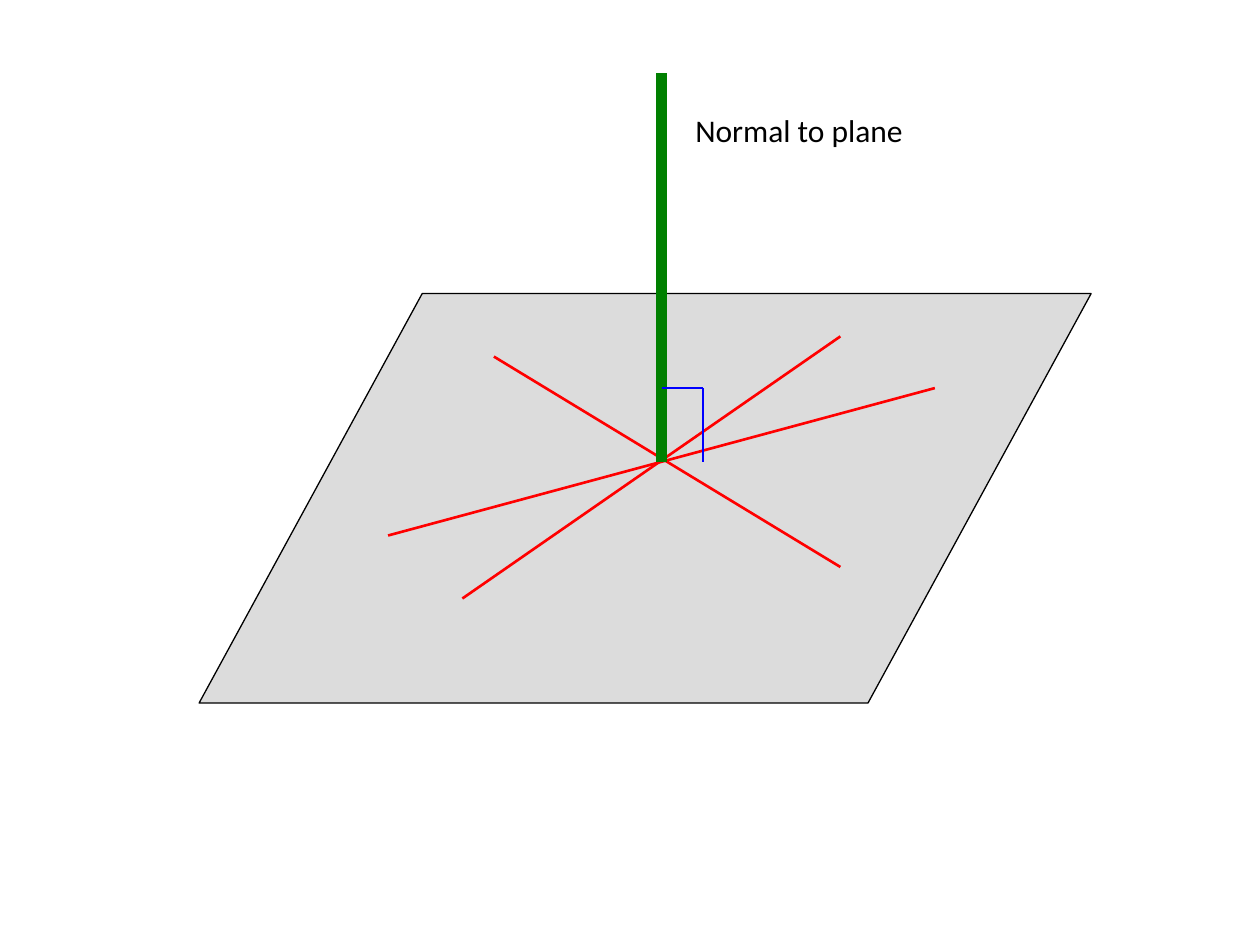
from lxml import etree
from pptx import Presentation
from pptx.dml.color import RGBColor
from pptx.enum import shapes, text
from pptx.oxml.ns import qn
from pptx.util import Inches, Pt

# Content: line ends as (x1, y1, x2, y2) in inches
PLANE = (1.58, 2.33, 7.08, 3.25)
PLANE_LINES = [
    (3.08, 4.25, 7.42, 3.08),
    (3.92, 2.83, 6.67, 4.5),
    (3.67, 4.75, 6.67, 2.67),
]
NORMAL = (5.25, 3.67, 5.25, 0.58)
RIGHT_ANGLE = [(5.25, 3.08, 5.58, 3.08), (5.58, 3.08, 5.58, 3.67)]
LABEL = "Normal to plane"
LABEL_BOX = (5.42, 0.83, 2, 0.4)


def color(value):
    return RGBColor.from_string(value)


def inches(values):
    return [Inches(v) for v in values]


def add_line(parent, ends, line_color, width):
    c = parent.add_connector(shapes.MSO_CONNECTOR.STRAIGHT, *inches(ends))
    c.line.color.rgb = color(line_color)
    c.line.width = Pt(width)
    etree.SubElement(c._element.spPr, qn("a:effectLst"))


prs = Presentation()
prs.slide_width, prs.slide_height = Inches(10), Inches(7.5)
s = prs.slides.add_slide(prs.slide_layouts[6])

# Translucent plane
plane = s.shapes.add_shape(shapes.MSO_SHAPE.PARALLELOGRAM, *inches(PLANE))
plane.adjustments[0] = 0.545
plane.shadow.inherit = False
plane.fill.solid()
plane.fill.fore_color.rgb = color("C0C0C0")
fill_color = plane._element.spPr.find(".//" + qn("a:srgbClr"))
etree.SubElement(fill_color, qn("a:alpha"), val="55000")
plane.line.color.rgb = color("000000")
plane.line.width = Pt(0.75)

# Lines in the plane, then the normal
for ends in PLANE_LINES:
    add_line(s.shapes, ends, "FF0000", 1.5)
add_line(s.shapes, NORMAL, "008000", 6)

# Right-angle mark
mark = s.shapes.add_group_shape()
for ends in RIGHT_ANGLE:
    add_line(mark.shapes, ends, "0000FF", 0.75)

# Label
tf = s.shapes.add_textbox(*inches(LABEL_BOX)).text_frame
tf.word_wrap = True
tf.auto_size = text.MSO_AUTO_SIZE.SHAPE_TO_FIT_TEXT
p = tf.paragraphs[0]
p.text = LABEL
p.font.name = "Calibri"
p.font.size = Pt(18)
p.font.color.rgb = color("000000")

prs.save("out.pptx")
